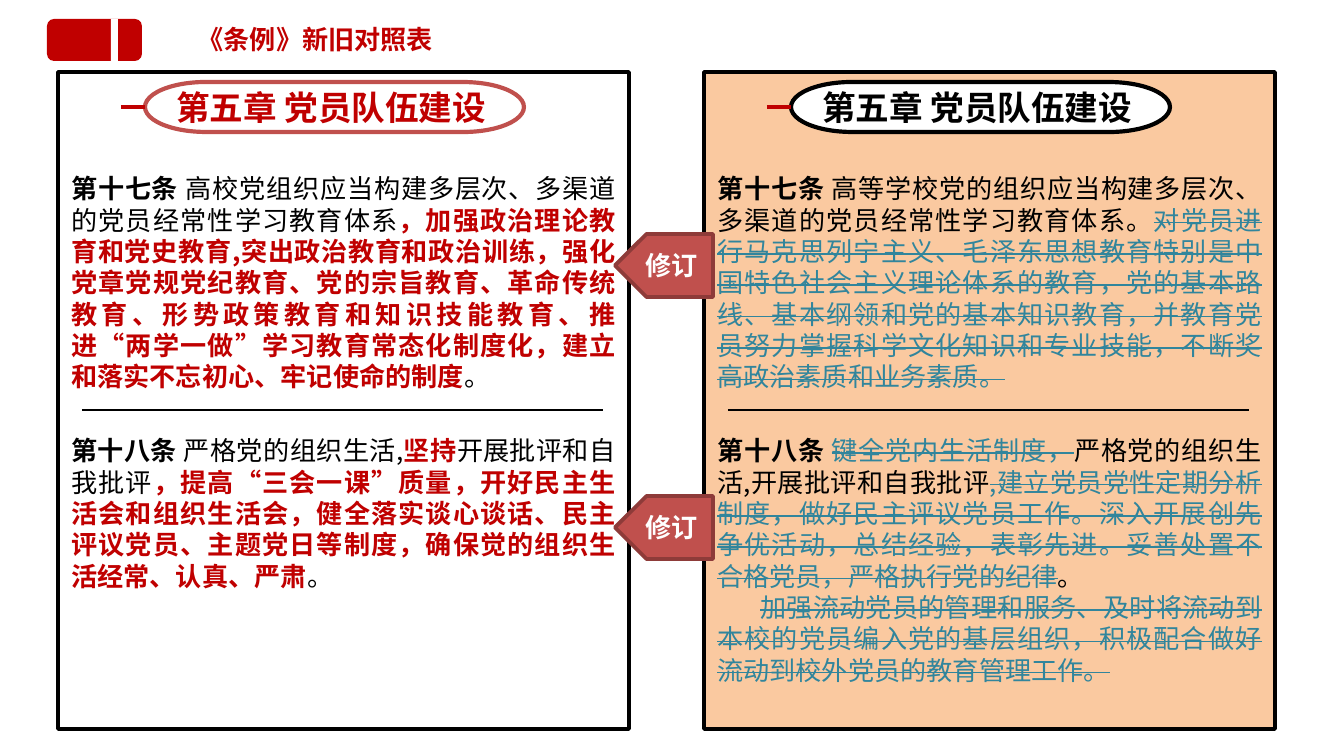
"""Builds the comparison slide of old and new regulation articles."""
from dataclasses import dataclass
from typing import Any

from lxml import etree
from pptx import Presentation
from pptx.dml import color
from pptx.enum import shapes, text
from pptx.oxml import ns
from pptx.util import Emu, Pt

SCALE = 9144000 / 1344
FONT = "Noto Sans CJK SC"
RED, BLACK, WHITE, TEAL = "C00000", "000000", "FFFFFF", "31859C"
BRICK, BRICK_EDGE, PEACH = "C0504D", "8E3B39", "FAC090"
AUTO, ALIGN = text.MSO_AUTO_SIZE, text.PP_ALIGN
KIND = shapes.MSO_SHAPE

FORMATS = {
    "head": {"hex": BLACK, "bold": True},
    "plain": {"hex": BLACK, "bold": False},
    "new": {"hex": RED, "bold": True},
    "cut": {"hex": TEAL, "bold": False, "strike": True},
    "light": {"hex": WHITE, "bold": True},
}


def px(n):
    """Turn whole pixels into EMU."""
    return Emu(round(n * SCALE))


def rgb(value):
    """Turn a hex string into a colour."""
    return color.RGBColor.from_string(value)


def sub(parent, tag, **attrs):
    """Append a DrawingML element."""
    return etree.SubElement(parent, ns.qn(tag), attrs)


@dataclass
class Deck:
    """Holds the style and the current slide."""
    s: Any
    font: str = FONT
    size: int = 14

    def run(self, p, words, style, size=None):
        """Add a run in one of the named formats."""
        fmt = dict(FORMATS[style])
        r = p.add_run()
        r.text = words
        r.font.color.rgb = rgb(fmt.pop("hex"))
        rpr = r.font._element
        if fmt.pop("strike", False):
            rpr.set("strike", "sngStrike")
        fmt.update(name=self.font, size=Pt(size or self.size))
        for key, value in fmt.items():
            setattr(r.font, key, value)
        sub(rpr, "a:ea", typeface=self.font)

    def title(self, box, words):
        """Place the title."""
        sp = self.s.shapes.title
        sp.left, sp.top, sp.width, sp.height = map(px, box)
        tf = sp.text_frame
        tf.word_wrap, tf.auto_size = False, AUTO.SHAPE_TO_FIT_TEXT
        p = tf.paragraphs[0]
        p.alignment = ALIGN.CENTER
        self.run(p, words, "new")

    def shape(self, kind, box, fill, line=None, width=2, alpha=None, on=None):
        """Add a preset shape."""
        sp = (on or self.s).shapes.add_shape(kind, *map(px, box))
        sp.shadow.inherit = False
        sp.fill.solid()
        sp.fill.fore_color.rgb = rgb(fill)
        if alpha:
            clr = sp._element.spPr.find(".//" + ns.qn("a:srgbClr"))
            sub(clr, "a:alpha", val=str(alpha * 1000))
        if line:
            sp.line.color.rgb = rgb(line)
            sp.line.width = Pt(width)
        else:
            sp.line.fill.background()
        return sp

    def label(self, sp, words, style, align, size=None):
        """Write one line inside a shape."""
        tf = sp.text_frame
        tf.vertical_anchor = text.MSO_ANCHOR.MIDDLE
        p = tf.paragraphs[0]
        p.alignment = align
        self.run(p, words, style, size)

    def line(self, x1, x2, y, stroke, width, on=None, end=None):
        """Add a level line, joined to a shape's left side if given."""
        cx = (on or self.s).shapes.add_connector(
            shapes.MSO_CONNECTOR.STRAIGHT, px(x1), px(y), px(x2), px(y))
        cx.line.color.rgb = rgb(stroke)
        cx.line.width = Pt(width)
        sub(cx._element.spPr, "a:effectLst")
        if end is not None:
            cx.end_connect(end, 1)

    def chapter(self, x, words, style, edge):
        """Add a chapter heading with its lead line."""
        grp = self.s.shapes.add_group_shape()
        sp = self.shape(KIND.FLOWCHART_TERMINATOR, (x + 87, 82, 379, 50),
                        WHITE, edge, 2.25, on=grp)
        self.label(sp, words, style, ALIGN.LEFT, 18)
        self.line(x + 63, x + 87, 107, RED, 2.25, grp, sp)

    def article(self, box, paragraphs):
        """Add an article of mixed runs; later paragraphs are indented."""
        tf = self.s.shapes.add_textbox(*map(px, box)).text_frame
        tf.word_wrap, tf.auto_size = True, AUTO.SHAPE_TO_FIT_TEXT
        for i, runs in enumerate(paragraphs):
            p = tf.add_paragraph() if i else tf.paragraphs[0]
            p.alignment, p.line_spacing = ALIGN.JUSTIFY, Pt(16.8)
            if i:
                p._p.get_or_add_pPr().set("indent", str(px(43)))
            for style, words in runs:
                self.run(p, words, style)

    def badge(self, y, words):
        """Add a left-pointing badge between the columns."""
        sp = self.shape(KIND.PENTAGON, (615, y, 98, 63), BRICK, BRICK_EDGE)
        sp._element.spPr.find(ns.qn("a:xfrm")).set("flipH", "1")
        self.label(sp, words, "light", ALIGN.CENTER)


NEW_17 = [[
    ("head", "第十七条 "),
    ("plain", "高校党组织应当构建多层次、多渠道的党员经常性学习教育体系"),
    ("new", "，加强政治理论教育和党史教育,突出政治教育和政治训练，强化党章党规党纪教育、"
            "党的宗旨教育、革命传统教育、形势政策教育和知识技能教育、推进“两学一做”"
            "学习教育常态化制度化，建立和落实不忘初心、牢记使命的制度"),
    ("plain", "。"),
]]
OLD_17 = [[
    ("head", "第十七条 "),
    ("plain", "高等学校党的组织应当构建多层次、多渠道的党员经常性学习教育体系。"),
    ("cut", "对党员进行马克思列宁主义、毛泽东思想教育特别是中国特色社会主义理论体系的教育，"
            "党的基本路线、基本纲领和党的基本知识教育，并教育党员努力掌握科学文化知识和"
            "专业技能，不断奖高政治素质和业务素质。"),
]]
NEW_18 = [[
    ("head", "第十八条 "),
    ("plain", "严格党的组织生活,"),
    ("new", "坚持"),
    ("plain", "开展批评和自我批评"),
    ("new", "，提高“三会一课”质量，开好民主生活会和组织生活会，健全落实谈心谈话、"
            "民主评议党员、主题党日等制度，确保觉的组织生活经常、认真、严肃"),
    ("plain", "。"),
]]
OLD_18 = [[
    ("head", "第十八条 "),
    ("cut", "键全党内生活制度，"),
    ("plain", "严格党的组织生活,开展批评和自我批评"),
    ("cut", ",建立党员党性定期分析制度，做好民主评议党员工作。深入开展创先争优活动，"
            "总结经验，表彰先进。妥善处置不合格党员，严格执行党的纪律"),
    ("plain", "。"),
], [
    ("cut", "加强流动党员的管理和服务、及时将流动到本校的党员编入党的基层组织，"
            "积极配合做好流动到校外党员的教育管理工作。"),
]]
COLUMNS = [
    (58, WHITE, "new", BRICK, NEW_17, NEW_18, 172),
    (704, PEACH, "head", BLACK, OLD_17, OLD_18, 267),
]


def main():
    """Build and save the slide."""
    prs = Presentation()
    prs.slide_width, prs.slide_height = px(1344), px(756)
    deck = Deck(prs.slides.add_slide(prs.slide_layouts[5]))
    deck.title((183, 16, 265, 46), "《条例》新旧对照表")
    deck.shape(KIND.ROUNDED_RECTANGLE, (47, 19, 95, 42), RED)
    deck.shape(KIND.RECTANGLE, (111, 19, 7, 42), WHITE)
    for x, fill, style, edge, first, second, height in COLUMNS:
        deck.shape(KIND.RECTANGLE, (x, 72, 571, 657), fill, BLACK, alpha=85)
        deck.chapter(x, "第五章 党员队伍建设", style, edge)
        deck.article((x, 166, 571, 235), first)
        deck.line(x + 24, x + 545, 410, BLACK, 0.75)
        deck.article((x, 428, 571, height), second)
    for y in (234, 496):
        deck.badge(y, "修订")
    prs.save("out.pptx")


if __name__ == "__main__":
    main()
